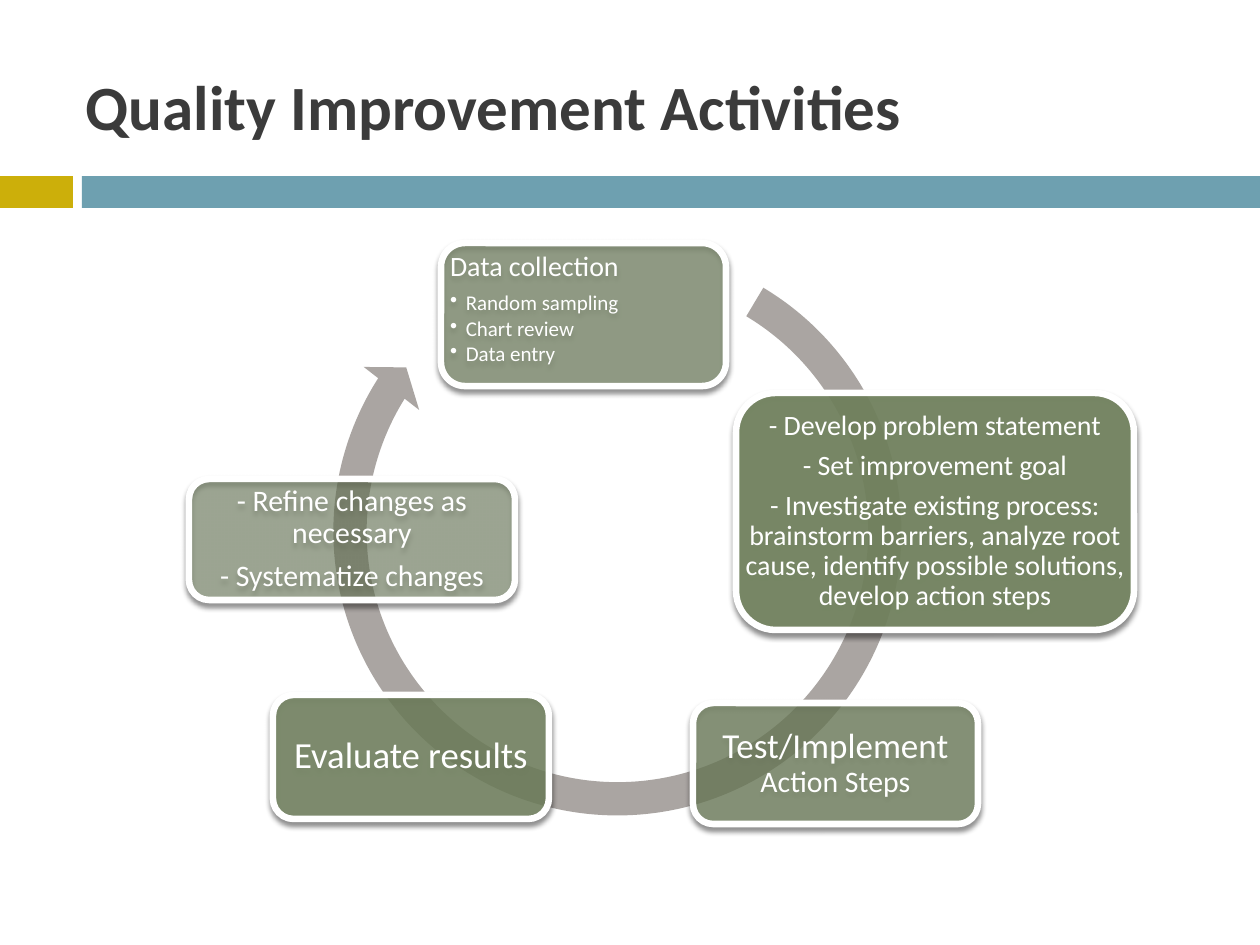
"""Build the quality improvement cycle slide."""
from lxml.etree import SubElement
from pptx import Presentation
from pptx.dml.color import RGBColor as RGB
from pptx.enum.shapes import MSO_SHAPE as Shape
from pptx.enum.text import MSO_ANCHOR as Anchor, PP_ALIGN as Align
from pptx.oxml import parse_xml
from pptx.oxml.ns import nsdecls, qn
from pptx.util import Pt

PX = 914400 / 126
FONT = "Calibri"
GOLD, BLUE, GRAY = RGB(0xCC, 0xAF, 0x0A), RGB(0x6E, 0xA0, 0xB0), RGB(0xA2, 0x9D, 0x99)
GREEN, DARK, WHITE = RGB(0x74, 0x85, 0x60), RGB(0x3B, 0x3B, 0x3B), RGB(0xFF, 0xFF, 0xFF)

TITLE = "Quality Improvement Activities"
BANDS = [((0, 176, 73, 32), GOLD), ((82, 176, 1178, 32), BLUE)]
RING = (315, 229, 605, 605)
RING_ADJ = (0.055, 3.31, 127.39, 180.55, 0.058)
CORNER_INSET = 0.29 * 0.1667

# Each step: box, opacity %, text inset, paragraphs of (text, size) runs, bullets
STEPS = [
    ((736, 393, 398, 237), 90, 9, [
        [("- Develop problem statement", 16)],
        [("- Set improvement goal", 16)],
        [("- Investigate existing process: brainstorm barriers, analyze root "
          "cause, identify possible solutions, develop action steps", 16)]], []),
    ((273, 695, 276, 124), 80, 11, [[("Evaluate results", 21)]], []),
    ((693, 703, 285, 121), 70, 10, [[("Test/Implement", 20), (" Action Steps", 17)]], []),
    ((441, 243, 285, 143), 60, 9, [[("Data collection", 16)]],
     ["Random sampling", "Chart review", "Data entry"]),
    ((189, 479, 326, 121), 50, 9, [
        [("- Refine changes as necessary", 17)],
        [("- Systematize changes", 17)]], []),
]


def emu(box):
    return [round(v * PX) for v in box]


def add_shape(shapes, kind, box, color, opacity=100):
    sp = shapes.add_shape(kind, *emu(box))
    sp.shadow.inherit = False
    sp.fill.solid()
    sp.fill.fore_color.rgb = color
    sp.line.fill.background()
    if opacity < 100:
        clr = sp._element.spPr.find(f"{qn('a:solidFill')}/{qn('a:srgbClr')}")
        SubElement(clr, qn("a:alpha"), val=str(opacity * 1000))
    return sp


def add_shadow(sp):
    effects = sp._element.spPr.find(qn("a:effectLst"))
    effects.append(parse_xml(
        f'<a:outerShdw {nsdecls("a")} blurRad="38100" dist="30480" dir="5400000" '
        'rotWithShape="0"><a:srgbClr val="000000"><a:alpha val="45000"/>'
        '</a:srgbClr></a:outerShdw>'))


def add_paragraph(tf, runs, align, after):
    p = tf.paragraphs[0] if not tf.text else tf.add_paragraph()
    p.alignment, p.line_spacing = align, 0.9
    p.space_after = Pt(round(runs[0][1] * after, 1))
    p.font.name, p.font.color.rgb = FONT, WHITE
    for text, size in runs:
        r = p.add_run()
        r.text, r.font.size = text, Pt(size)
    return p


def add_bullet(p):
    pPr = p._p.get_or_add_pPr()
    pPr.set("marL", "114300")
    pPr.set("indent", "-114300")
    pPr.find(qn("a:defRPr")).addprevious(
        parse_xml(f'<a:buChar {nsdecls("a")} char="•"/>'))


def add_step(shapes, box, opacity, inset, paragraphs, bullets):
    sp = add_shape(shapes, Shape.ROUNDED_RECTANGLE, box, GREEN, opacity)
    sp.line.color.rgb, sp.line.width = WHITE, Pt(3.75)
    add_shadow(sp)
    tf = sp.text_frame
    tf.word_wrap = True
    tf.vertical_anchor = Anchor.TOP if bullets else Anchor.MIDDLE
    margin = round((inset - CORNER_INSET * min(box[2:])) * PX)
    tf.margin_left = tf.margin_right = tf.margin_top = tf.margin_bottom = margin
    for runs in paragraphs:
        add_paragraph(tf, runs, Align.LEFT if bullets else Align.CENTER, 0.35)
    for text in bullets:
        add_bullet(add_paragraph(tf, [(text, 12)], Align.LEFT, 0.15))


def main():
    prs = Presentation()
    prs.slide_width, prs.slide_height = emu((1260, 945))
    s = prs.slides.add_slide(prs.slide_layouts[5])
    for box, color in BANDS:
        add_shape(s.shapes, Shape.RECTANGLE, box, color)

    title = s.shapes.title
    title.left, title.top, title.width, title.height = emu((73, 53, 1092, 105))
    title.text_frame.text = TITLE
    title.text_frame.vertical_anchor = Anchor.MIDDLE
    p = title.text_frame.paragraphs[0]
    p.alignment = Align.LEFT
    p.font.name, p.font.size, p.font.bold = FONT, Pt(36), True
    p.font.color.rgb = DARK

    ring = add_shape(s.shapes, Shape.CIRCULAR_ARROW, RING, GRAY, 91)
    for i, value in enumerate(RING_ADJ):
        ring.adjustments[i] = value
    for step in STEPS:
        add_step(s.shapes, *step)
    prs.save("out.pptx")


if __name__ == "__main__":
    main()
